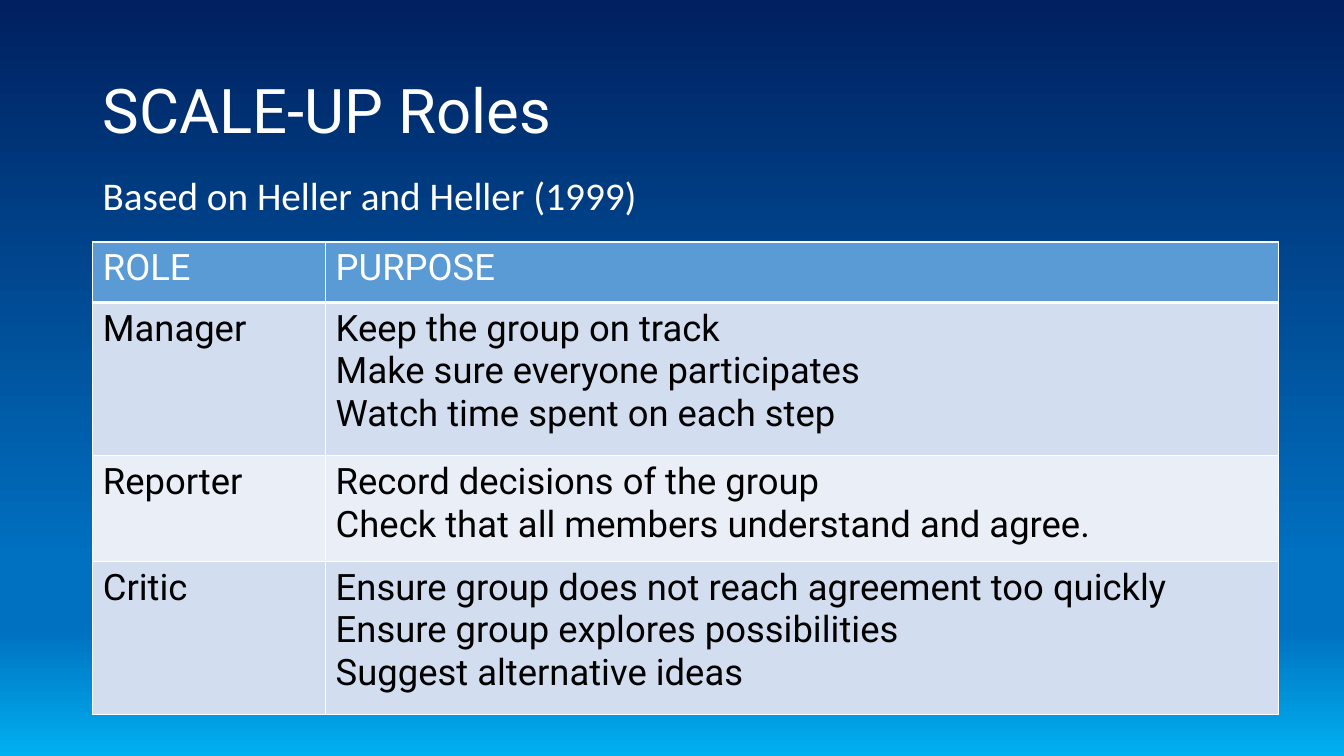
from lxml import etree
from pptx import Presentation
from pptx import util as u
from pptx.dml.color import RGBColor
from pptx.enum import text
from pptx.oxml.ns import qn

WHITE = RGBColor(0xFF, 0xFF, 0xFF)
BLACK = RGBColor(0, 0, 0)
HEADER = RGBColor(0x5B, 0x9B, 0xD5)
BANDS = [RGBColor(0xEA, 0xEF, 0xF7), RGBColor(0xD2, 0xDE, 0xEF)]
SKY = [(0, "002060"), (74, "0070C0"), (83, "0070C0"), (100, "00B0F0")]

LEFT, WIDTH = u.Inches(0.92), u.Inches(11.5)
COLUMNS = [2.31, 9.45]
ROWS = [0.6, 1.52, 1.05, 1.52]
ROLES = [
    ("ROLE", ["PURPOSE"]),
    ("Manager", ["Keep the group on track",
                 "Make sure everyone participates",
                 "Watch time spent on each step"]),
    ("Reporter", ["Record decisions of the group",
                  "Check that all members understand and agree."]),
    ("Critic", ["Ensure group does not reach agreement too quickly",
                "Ensure group explores possibilities",
                "Suggest alternative ideas"]),
]


def write(tf, lines, size=26, font="Roboto", color=WHITE, spacing=None, before=None):
    for i, line in enumerate(lines):
        p = tf.add_paragraph() if i else tf.paragraphs[0]
        p.alignment = text.PP_ALIGN.LEFT
        p.line_spacing = spacing
        p.space_before = before
        r = p.add_run()
        r.text = line
        r.font.size = u.Pt(size)
        r.font.name = font
        r.font.color.rgb = color


def add_border(cell, side, width):
    ln = etree.SubElement(cell._tc.get_or_add_tcPr(), qn("a:ln" + side), w=str(u.Pt(width)))
    fill = etree.SubElement(ln, qn("a:solidFill"))
    etree.SubElement(fill, qn("a:srgbClr"), val=str(WHITE))


prs = Presentation()
prs.slide_width, prs.slide_height = u.Inches(13.33), u.Inches(7.5)
s = prs.slides.add_slide(prs.slide_layouts[5])

# Background running from dark to light blue
fill = s.background.fill
fill.gradient()
fill.gradient_angle = 270
stops = s._element.find(".//" + qn("a:gsLst"))
for stop in list(stops):
    stops.remove(stop)
for share, color in SKY:
    stop = etree.SubElement(stops, qn("a:gs"), pos=str(share * 1000))
    etree.SubElement(stop, qn("a:srgbClr"), val=color)

# Title
title = s.shapes.title
title.left, title.top, title.width, title.height = LEFT, u.Inches(0.4), WIDTH, u.Inches(1.45)
title.text_frame.vertical_anchor = text.MSO_ANCHOR.MIDDLE
write(title.text_frame, ["SCALE-UP Roles"], size=44, spacing=0.9)

# Subtitle
subtitle = s.shapes.add_textbox(LEFT, u.Inches(1.7), WIDTH, u.Inches(0.6))
subtitle.text_frame.word_wrap = True
write(subtitle.text_frame, ["Based on Heller and Heller (1999)"],
      size=28, font="Calibri", spacing=0.9, before=u.Pt(10))

# Table of roles
table = s.shapes.add_table(len(ROWS), len(COLUMNS), LEFT, u.Inches(2.4),
                           u.Inches(sum(COLUMNS)), u.Inches(sum(ROWS))).table
for column, width in zip(table.columns, COLUMNS):
    column.width = u.Inches(width)
for i, (role, purposes) in enumerate(ROLES):
    table.rows[i].height = u.Inches(ROWS[i])
    for j, lines in enumerate([[role], purposes]):
        cell = table.cell(i, j)
        for side in "LRTB":
            heavy = (i, side) in [(0, "B"), (1, "T")]
            add_border(cell, side, 3 if heavy else 1)
        cell.fill.solid()
        cell.fill.fore_color.rgb = BANDS[i % 2] if i else HEADER
        write(cell.text_frame, lines, color=BLACK if i else WHITE)
        for p in cell.text_frame.paragraphs:
            p.runs[0].font.bold = False

prs.save("out.pptx")
